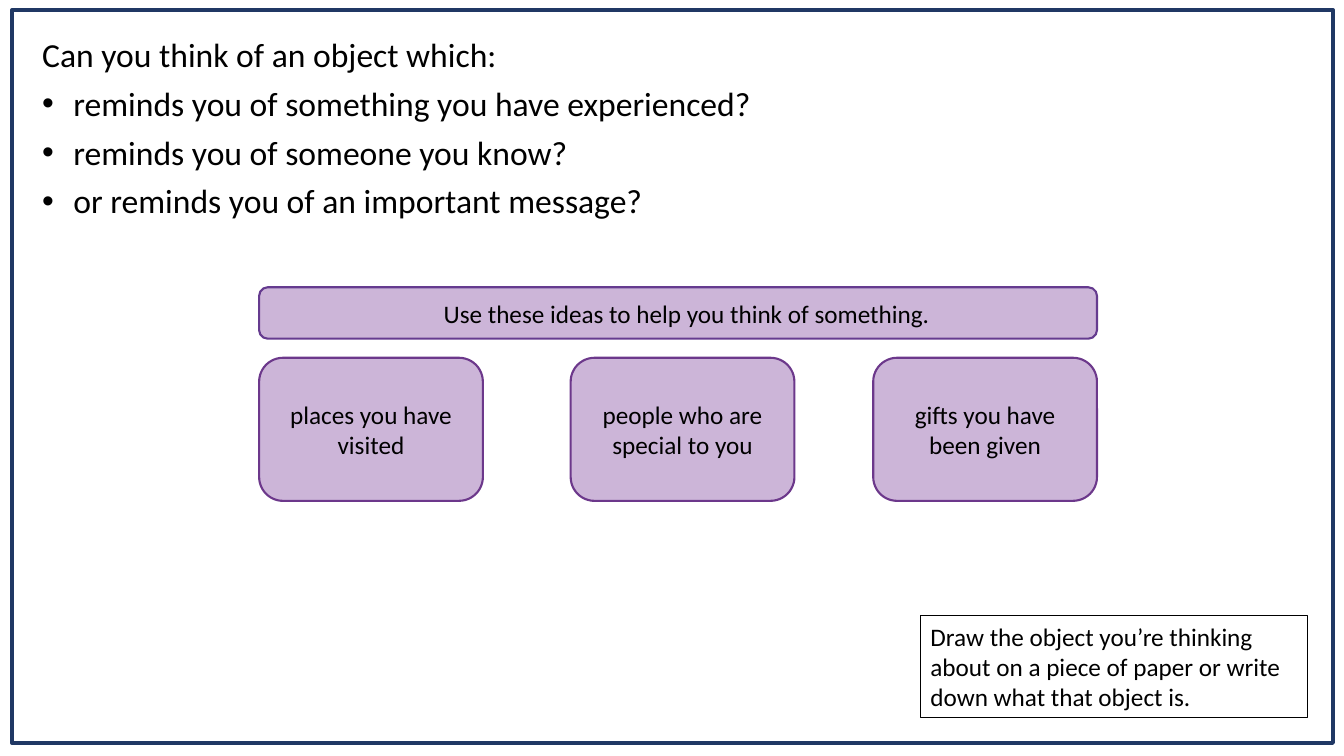
from lxml.etree import SubElement
from pptx import Presentation
from pptx.dml.color import RGBColor
from pptx.enum.shapes import MSO_SHAPE
from pptx.enum.text import MSO_ANCHOR, MSO_AUTO_SIZE, PP_ALIGN
from pptx.oxml.ns import qn
from pptx.util import Inches, Pt

SLIDE_WIDTH, SLIDE_HEIGHT = Inches(13.33), Inches(7.5)
BLACK, NAVY = "000000", "203864"
LILAC, PURPLE, BANNER_PURPLE = "CCB5D8", "6C388B", "653B8F"
IDEAS_LEFT, IDEAS_WIDTH = 19.28, 62.34
CARD_TOP, CARD_WIDTH, CARD_HEIGHT = 47.33, 16.65, 18.93
QUESTIONS = [
    "reminds you of something you have experienced?",
    "reminds you of someone you know?",
    "or reminds you of an important message?",
]
IDEAS = [
    (IDEAS_LEFT, "places you have visited"),
    (42.46, "people who are special to you"),
    (IDEAS_LEFT + IDEAS_WIDTH - CARD_WIDTH, "gifts you have been given"),
]


def color(hex_value):
    """Turn a hex string into a colour."""
    return RGBColor.from_string(hex_value)


def area(left, top, width, height):
    """Turn percentages of the slide's size into lengths."""
    return (
        int(SLIDE_WIDTH * left / 100),
        int(SLIDE_HEIGHT * top / 100),
        int(SLIDE_WIDTH * width / 100),
        int(SLIDE_HEIGHT * height / 100),
    )


def format_paragraph(paragraph, size, align=PP_ALIGN.LEFT, space_after=6):
    """Set the alignment, spacing and font of a paragraph."""
    paragraph.alignment = align
    paragraph.space_after = Pt(space_after)
    for run in paragraph.runs:
        run.font.name = "Calibri"
        run.font.size = Pt(size)
        run.font.color.rgb = color(BLACK)


def add_bullet(paragraph):
    """Give a paragraph a hanging round bullet."""
    properties = paragraph._p.get_or_add_pPr()
    properties.set("marL", str(Inches(0.31)))
    properties.set("indent", str(-Inches(0.31)))
    SubElement(properties, qn("a:buFont"), typeface="Arial")
    SubElement(properties, qn("a:buChar"), char="•")


def add_box(slide, kind, place, line, line_width, fill=None):
    """Draw an outlined shape, filled when a colour is given."""
    shape = slide.shapes.add_shape(kind, *area(*place))
    shape.shadow.inherit = False
    if fill:
        shape.fill.solid()
        shape.fill.fore_color.rgb = color(fill)
    else:
        shape.fill.background()
    shape.line.color.rgb = color(line)
    shape.line.width = Pt(line_width)
    return shape


def write_label(shape, text, align, anchor, space_after=6):
    """Write one wrapped paragraph into a shape."""
    frame = shape.text_frame
    frame.word_wrap = True
    frame.vertical_anchor = anchor
    frame.text = text
    format_paragraph(frame.paragraphs[0], 18, align, space_after)
    return frame


def add_questions(slide):
    """Add the opening question and its bulleted endings."""
    box = slide.shapes.add_textbox(*area(2.4, 3.87, 70.07, 26.27))
    frame = box.text_frame
    frame.word_wrap = True
    frame.auto_size = MSO_AUTO_SIZE.SHAPE_TO_FIT_TEXT
    frame.text = "Can you think of an object which:"
    format_paragraph(frame.paragraphs[0], 24)
    for question in QUESTIONS:
        paragraph = frame.add_paragraph()
        paragraph.text = question
        add_bullet(paragraph)
        format_paragraph(paragraph, 24)


def add_ideas(slide):
    """Add the row of idea cards and the banner above it."""
    for left, idea in IDEAS:
        place = (left, CARD_TOP, CARD_WIDTH, CARD_HEIGHT)
        card = add_box(slide, MSO_SHAPE.ROUNDED_RECTANGLE, place, PURPLE, 1.5, LILAC)
        write_label(card, idea, PP_ALIGN.CENTER, MSO_ANCHOR.MIDDLE, 0)
    place = (IDEAS_LEFT, 38, IDEAS_WIDTH, 6.8)
    banner = add_box(slide, MSO_SHAPE.ROUNDED_RECTANGLE, place, BANNER_PURPLE, 1.5, LILAC)
    frame = write_label(banner, "Use these ideas to help you think of something.",
                        PP_ALIGN.CENTER, MSO_ANCHOR.TOP)
    frame.margin_left, frame.margin_right = Inches(0.17), 0
    frame.margin_top = frame.margin_bottom = Inches(0.08)
    frame.auto_size = MSO_AUTO_SIZE.SHAPE_TO_FIT_TEXT


def add_task(slide):
    """Add the drawing task in the lower right corner."""
    task = add_box(slide, MSO_SHAPE.RECTANGLE, (68.49, 81.47, 28.81, 13.47), BLACK, 0.75)
    frame = write_label(
        task,
        "Draw the object you’re thinking about on a piece of paper "
        "or write down what that object is.",
        PP_ALIGN.LEFT,
        MSO_ANCHOR.TOP,
    )
    frame.auto_size = MSO_AUTO_SIZE.SHAPE_TO_FIT_TEXT


def main():
    """Build and save the slide."""
    presentation = Presentation()
    presentation.slide_width = SLIDE_WIDTH
    presentation.slide_height = SLIDE_HEIGHT
    slide = presentation.slides.add_slide(presentation.slide_layouts[6])
    add_questions(slide)
    add_ideas(slide)
    add_task(slide)
    add_box(slide, MSO_SHAPE.RECTANGLE, (0.9, 1.33, 98.27, 96.93), NAVY, 3)
    presentation.save("out.pptx")


if __name__ == "__main__":
    main()
